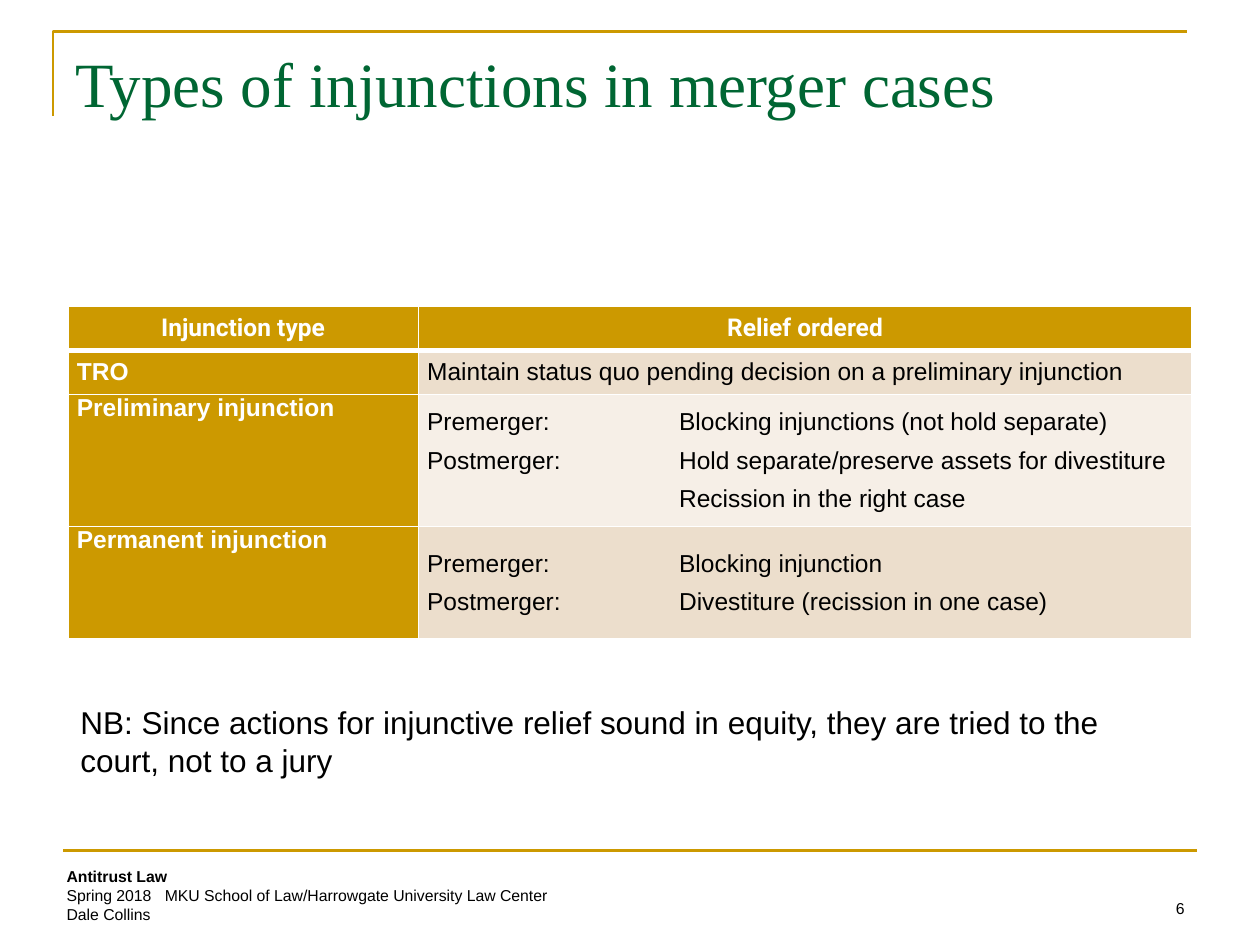
from lxml import etree
from pptx import Presentation
from pptx import util as u
from pptx.dml.color import RGBColor
from pptx.enum import text
from pptx.oxml.ns import qn

COLORS = {
    "gold": "CC9900", "green": "006633", "black": "000000",
    "white": "FFFFFF", "tan": "ECDECC", "cream": "F6EFE7",
}
ROWS = [
    ("TRO", ["Maintain status quo pending decision on a preliminary injunction"], "tan"),
    ("Preliminary injunction", [
        "Premerger:\tBlocking injunctions (not hold separate)",
        "Postmerger:\tHold separate/preserve assets for divestiture",
        "\tRecission in the right case"], "cream"),
    ("Permanent injunction", [
        "Premerger:\tBlocking injunction",
        "Postmerger:\tDivestiture (recission in one case)"], "tan"),
]
COLUMN_WIDTHS = [2.78, 6.14]
ROW_HEIGHTS = [0.35, 0.35, 1.05, 0.89]
MIDDLE, TOP = text.MSO_ANCHOR.MIDDLE, text.MSO_ANCHOR.TOP


def color(name):
    return RGBColor.from_string(COLORS[name])


def add_span(para, words, size, tint="black", font="Arial", bold=False):
    span = para.add_run()
    span.text = words
    span.font.size = u.Pt(size)
    span.font.name = font
    span.font.bold = bold
    span.font.color.rgb = color(tint)


def add_tab_stop(para, inches):
    stops = etree.SubElement(para._p.get_or_add_pPr(), qn("a:tabLst"))
    etree.SubElement(stops, qn("a:tab"), pos=str(u.Inches(inches)), algn="l")


def add_box(page, left, top, width, height):
    box = page.shapes.add_textbox(*map(u.Inches, (left, top, width, height)))
    box.text_frame.word_wrap = True
    return box.text_frame


def style_rule(shape):
    shape.line.color.rgb = color("gold")
    shape.line.width = u.Pt(1.5)
    etree.SubElement(shape._element.spPr, qn("a:effectLst"))


def add_rules(page):
    """Draw the corner bracket round the title and the line above the footer."""
    builder = page.shapes.build_freeform(u.Inches(0.42), u.Inches(0.92))
    corners = [(0.42, 0.25), (9.42, 0.25)]
    builder.add_line_segments([(u.Inches(x), u.Inches(y)) for x, y in corners], close=False)
    bracket = builder.convert_to_shape()
    bracket.fill.background()
    style_rule(bracket)
    style_rule(page.shapes.add_connector(
        1, u.Inches(0.5), u.Inches(6.75), u.Inches(9.5), u.Inches(6.75)))


def add_title(page, words):
    title = page.shapes.title
    title.left, title.top, title.width, title.height = map(u.Inches, (0.5, 0.3, 9, 0.78))
    title.text_frame.vertical_anchor = TOP
    para = title.text_frame.paragraphs[0]
    para.alignment = text.PP_ALIGN.LEFT
    add_span(para, words, 36, "green", "Times New Roman")


def set_borders(cell, top=1, bottom=1):
    properties = cell._tc.get_or_add_tcPr()
    for side, points in (("L", 1), ("R", 1), ("T", top), ("B", bottom)):
        line = etree.SubElement(properties, qn(f"a:ln{side}"), w=str(u.Pt(points)))
        fill = etree.SubElement(line, qn("a:solidFill"))
        etree.SubElement(fill, qn("a:srgbClr"), val=COLORS["white"])


def fill_cell(cell, lines, fill, anchor=MIDDLE, align=text.PP_ALIGN.LEFT, **style):
    cell.margin_left = cell.margin_right = u.Inches(0.07)
    cell.margin_top = cell.margin_bottom = 0
    cell.vertical_anchor = anchor
    cell.fill.solid()
    cell.fill.fore_color.rgb = color(fill)
    for index, words in enumerate(lines):
        frame = cell.text_frame
        para = frame.add_paragraph() if index else frame.paragraphs[0]
        para.alignment = align
        para.space_after = u.Pt(6)
        if "\t" in words:
            add_tab_stop(para, 2)
        add_span(para, words, 14, **style)


def add_injunction_table(page):
    table = page.shapes.add_table(
        len(ROW_HEIGHTS), len(COLUMN_WIDTHS), u.Inches(0.54), u.Inches(2.43),
        u.Inches(sum(COLUMN_WIDTHS)), u.Inches(sum(ROW_HEIGHTS))).table
    for column, width in zip(table.columns, COLUMN_WIDTHS):
        column.width = u.Inches(width)
    for index, (row, height) in enumerate(zip(table.rows, ROW_HEIGHTS)):
        row.height = u.Inches(height)
        for cell in row.cells:
            set_borders(cell, top=3 if index == 1 else 1, bottom=3 if index == 0 else 1)
    for column, heading in enumerate(("Injunction type", "Relief ordered")):
        fill_cell(table.cell(0, column), [heading], "gold", align=text.PP_ALIGN.CENTER,
                  tint="white", font="Roboto", bold=True)
    for index, (kind, relief, fill) in enumerate(ROWS, start=1):
        fill_cell(table.cell(index, 0), [kind], "gold", MIDDLE if index == 1 else TOP,
                  tint="white", bold=True)
        fill_cell(table.cell(index, 1), relief, fill)


def add_footer(page):
    para = add_box(page, 0.43, 6.83, 4.67, 0.56).paragraphs[0]
    add_tab_stop(para, 0.78)
    add_span(para, "Antitrust Law", 9, bold=True)
    para.add_line_break()
    add_span(para, "Spring 2018\tMKU School of Law/Harrowgate University Law Center", 9)
    para.add_line_break()
    add_span(para, "Dale Collins", 9)

    number = add_box(page, 7.17, 6.83, 2.33, 0.5)
    number.vertical_anchor = text.MSO_ANCHOR.BOTTOM
    number.paragraphs[0].alignment = text.PP_ALIGN.RIGHT
    add_span(number.paragraphs[0], "6", 9)


def main():
    deck = Presentation()
    deck.slide_width, deck.slide_height = u.Inches(10), u.Inches(7.5)
    page = deck.slides.add_slide(deck.slide_layouts[5])
    add_rules(page)
    add_title(page, "Types of injunctions in merger cases")
    add_injunction_table(page)
    note = add_box(page, 0.54, 5.53, 8.73, 0.71)
    add_span(note.paragraphs[0], "NB: Since actions for injunctive relief sound in equity, "
             "they are tried to the court, not to a jury", 18)
    add_footer(page)
    deck.save("out.pptx")


if __name__ == "__main__":
    main()
